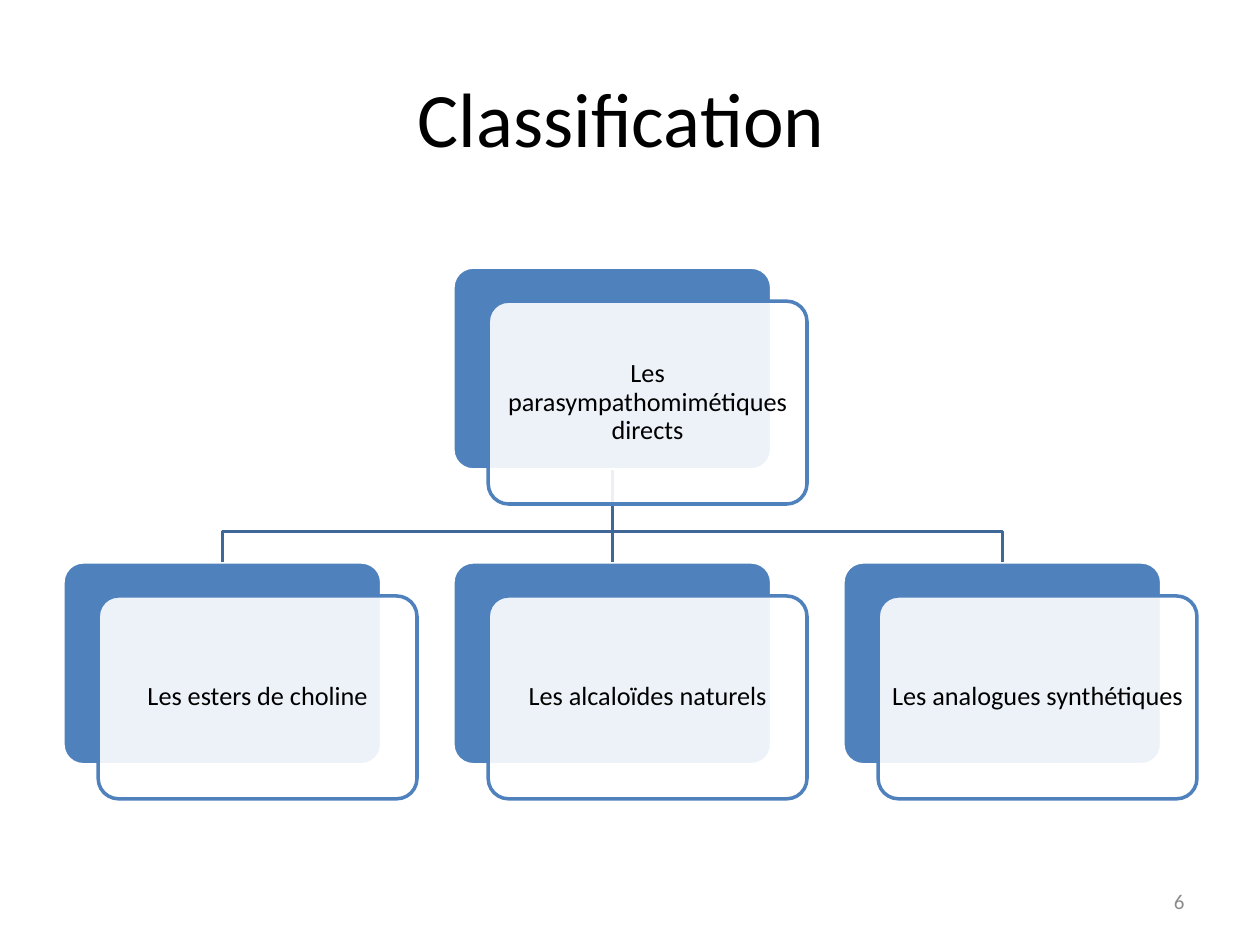
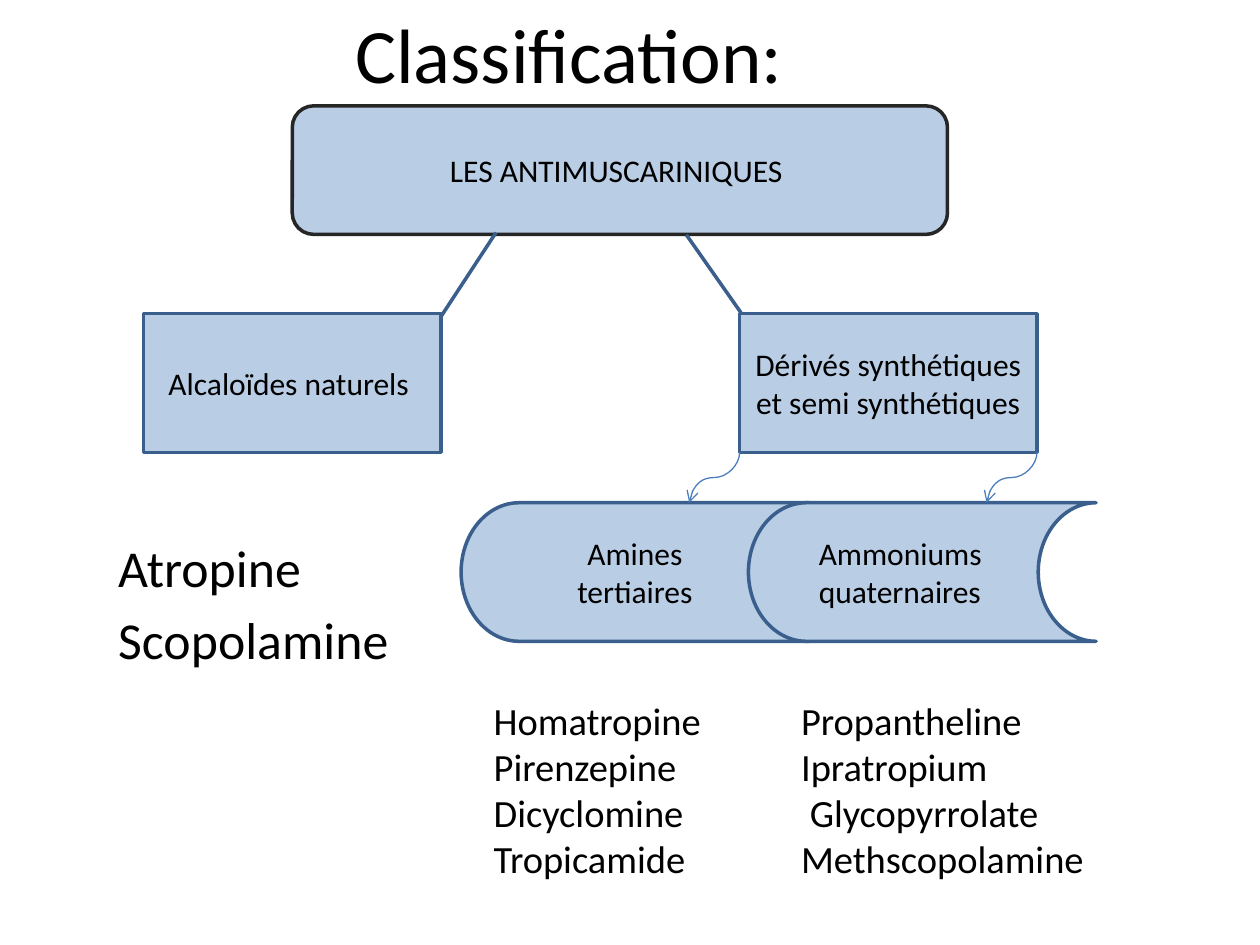
import pptx
import pptx.util
from lxml import etree
from pptx.dml.color import RGBColor
from pptx.enum.shapes import MSO_CONNECTOR, MSO_SHAPE
from pptx.enum.text import MSO_ANCHOR, PP_ALIGN
from pptx.oxml.ns import qn
from pptx.util import Inches, Pt

FONT = "Calibri"
BLACK = RGBColor(0x00, 0x00, 0x00)
WHITE = RGBColor(0xFF, 0xFF, 0xFF)
GREY = RGBColor(0x8C, 0x8C, 0x8C)
CHARCOAL = RGBColor(0x26, 0x26, 0x26)
BLUE = RGBColor(0x4F, 0x81, 0xBD)
TREE_BLUE = RGBColor(0x3F, 0x67, 0x97)
ARROW_BLUE = RGBColor(0x4B, 0x7E, 0xBC)
PALE_BLUE = RGBColor(0xB9, 0xCD, 0xE5)
EDGE_BLUE = RGBColor(0x3A, 0x5F, 0x8C)

CARD_WIDTH, CARD_HEIGHT = 2.53, 1.61
CARD_SHIFT_X, CARD_SHIFT_Y = 0.28, 0.27


def write(shape, lines, size, color=BLACK, align=PP_ALIGN.LEFT,
          anchor=MSO_ANCHOR.MIDDLE, space_before=0, line_spacing=None):
    frame = shape.text_frame
    frame.word_wrap = True
    frame.vertical_anchor = anchor
    frame.text = "\n".join(lines)
    for index, paragraph in enumerate(frame.paragraphs):
        paragraph.alignment = align
        if index and space_before:
            paragraph.space_before = Pt(space_before)
        if line_spacing:
            paragraph.line_spacing = line_spacing
        for span in paragraph.runs:
            span.font.name = FONT
            span.font.size = Pt(size)
            span.font.color.rgb = color


def add_text(page, box, lines, size, **style):
    shape = page.shapes.add_textbox(*map(Inches, box))
    write(shape, lines, size, **style)


def add_title(page, box, title):
    add_text(page, box, [title], 44, align=PP_ALIGN.CENTER)


def add_block(page, kind, box, fill, edge, adjustments=()):
    shape = page.shapes.add_shape(kind, *map(Inches, box))
    shape.shadow.inherit = False
    shape.fill.solid()
    shape.fill.fore_color.rgb = fill
    shape.line.color.rgb = edge
    shape.line.width = Pt(2)
    for index, value in enumerate(adjustments):
        shape.adjustments[index] = value
    return shape


def style_connector(connector, color, width):
    connector.line.color.rgb = color
    connector.line.width = Pt(width)
    etree.SubElement(connector._element.spPr, qn("a:effectLst"))


def add_downward_connector(page, kind, start, end, color, width, bend=0.5):
    """Draw a bent or curved connector that leaves and arrives vertically."""
    (x1, y1), (x2, y2) = start, end
    middle_x, middle_y = (x1 + x2) / 2, (y1 + y2) / 2
    half_run, half_drop = (x2 - x1) / 2, (y2 - y1) / 2
    connector = page.shapes.add_connector(
        kind, Inches(middle_x - half_drop), Inches(middle_y + half_run),
        Inches(middle_x + half_drop), Inches(middle_y - half_run))
    properties = connector._element.spPr
    properties.find(qn("a:xfrm")).set("rot", "5400000")
    guides = properties.find(qn("a:prstGeom")).find(qn("a:avLst"))
    etree.SubElement(guides, qn("a:gd"), name="adj1", fmla=f"val {round(bend * 100000)}")
    style_connector(connector, color, width)
    return connector


def add_back_card(page, left, top):
    return add_block(page, MSO_SHAPE.ROUNDED_RECTANGLE,
                     (left, top, CARD_WIDTH, CARD_HEIGHT), BLUE, WHITE, [0.1])


def add_front_card(page, left, top, label):
    box = (left + CARD_SHIFT_X, top + CARD_SHIFT_Y, CARD_WIDTH, CARD_HEIGHT)
    card = add_block(page, MSO_SHAPE.ROUNDED_RECTANGLE, box, WHITE, BLUE, [0.1])
    color = card._element.spPr.find(qn("a:solidFill"))[0]
    etree.SubElement(color, qn("a:alpha"), val="90000")
    frame = card.text_frame
    frame.margin_left = frame.margin_right = Inches(0.05)
    frame.margin_top = frame.margin_bottom = Inches(0.05)
    write(card, [label], 15, align=PP_ALIGN.CENTER, line_spacing=0.9)


def add_card_tree(page, box, root, branches):
    left, top, width, height = box
    pitch = (width - CARD_WIDTH - CARD_SHIFT_X) / (len(branches) - 1)
    branch_top = top + height - CARD_HEIGHT - CARD_SHIFT_Y
    root_left = left + (width - CARD_WIDTH - CARD_SHIFT_X) / 2
    lefts = [left + index * pitch for index in range(len(branches))]

    root_card = add_back_card(page, root_left, top)
    branch_cards = [add_back_card(page, x, branch_top) for x in lefts]

    start = (root_left + CARD_WIDTH / 2, top + CARD_HEIGHT)
    for x, card in zip(lefts, branch_cards):
        end = (x + CARD_WIDTH / 2, branch_top)
        if abs(end[0] - start[0]) < 0.01:
            trunk = page.shapes.add_connector(
                MSO_CONNECTOR.STRAIGHT, *map(Inches, start + end))
            trunk.begin_connect(root_card, 2)
            trunk.end_connect(card, 0)
            style_connector(trunk, TREE_BLUE, 2)
        else:
            add_downward_connector(page, MSO_CONNECTOR.ELBOW, start, end,
                                   TREE_BLUE, 2, bend=0.67)

    add_front_card(page, root_left, top, root)
    for x, label in zip(lefts, branches):
        add_front_card(page, x, branch_top, label)


def add_antimuscarinic_tree(page, box):
    left, top = box[:2]
    heading = add_block(page, MSO_SHAPE.ROUNDED_RECTANGLE,
                        (left + 1.18, top, 5.2, 1.02), PALE_BLUE, CHARCOAL)
    write(heading, ["LES ANTIMUSCARINIQUES "], 18, align=PP_ALIGN.CENTER)

    family_width, row_height = 2.36, 1.1
    family_top, storage_top = top + 1.65, top + 3.15
    synthetic_left = left + 4.73
    families = [
        (left, "Alcaloïdes naturels ", [0.024, 0.999, -0.585, 1.185]),
        (synthetic_left, "Dérivés synthétiques et semi synthétiques",
         [-0.569, -0.179, -0.007, 0.005]),
    ]
    for x, label, pointer in families:
        family = add_block(page, MSO_SHAPE.LINE_CALLOUT_1,
                           (x, family_top, family_width, row_height),
                           PALE_BLUE, EDGE_BLUE, pointer)
        write(family, [label], 18, align=PP_ALIGN.CENTER)

    amines = [(2.52, "Amines tertiaires", PP_ALIGN.CENTER),
              (4.8, "Ammoniums quaternaires", PP_ALIGN.LEFT)]
    for offset, label, align in amines:
        storage = add_block(page, MSO_SHAPE.FLOWCHART_STORED_DATA,
                            (left + offset, storage_top, 2.76, row_height),
                            PALE_BLUE, EDGE_BLUE)
        write(storage, [label], 18, align=align)

    for x in (synthetic_left, synthetic_left + family_width):
        arrow = add_downward_connector(
            page, MSO_CONNECTOR.CURVE, (x, family_top + row_height),
            (x - 0.4, storage_top), ARROW_BLUE, 0.75)
        etree.SubElement(arrow.line._get_or_add_ln(), qn("a:tailEnd"), type="arrow")


def add_drug_lists(page, box):
    left, top = box[:2]
    add_text(page, (left, top, 2.8, 1.3), ["Atropine", "Scopolamine"], 29.6,
             anchor=MSO_ANCHOR.TOP, space_before=5.9)
    columns = [
        (2.98, 2.13, ["Homatropine", "Pirenzepine", "Dicyclomine", "Tropicamide"]),
        (5.42, 2.68, ["Propantheline", "Ipratropium", " Glycopyrrolate",
                      "Methscopolamine"]),
    ]
    for offset, width, drugs in columns:
        add_text(page, (left + offset, top + 1.28, width, 1.58), drugs, 22,
                 anchor=MSO_ANCHOR.TOP)


def build_parasympathomimetics(page):
    add_title(page, (0.5, 0.3, 9, 1.25), "Classification ")
    add_card_tree(page, (0.5, 2.12, 9, 4.22), "Les parasympathomimétiques directs",
                  ["Les esters de choline", "Les alcaloïdes naturels",
                   "Les analogues synthétiques"])
    add_text(page, (7.17, 6.95, 2.33, 0.4), ["6"], 12, color=GREY, align=PP_ALIGN.RIGHT)


def build_antimuscarinics(page):
    add_title(page, (0.5, 0, 8.17, 0.84), "Classification: ")
    add_antimuscarinic_tree(page, (1.14, 0.84, 7.56, 4.25))
    add_drug_lists(page, (0.84, 4.2, 8.1, 2.86))


def main():
    deck = pptx.Presentation()
    deck.slide_width, deck.slide_height = Inches(10), Inches(7.5)
    for build in (build_parasympathomimetics, build_antimuscarinics):
        build(deck.slides.add_slide(deck.slide_layouts[6]))
    deck.save("out.pptx")


if __name__ == "__main__":
    main()
